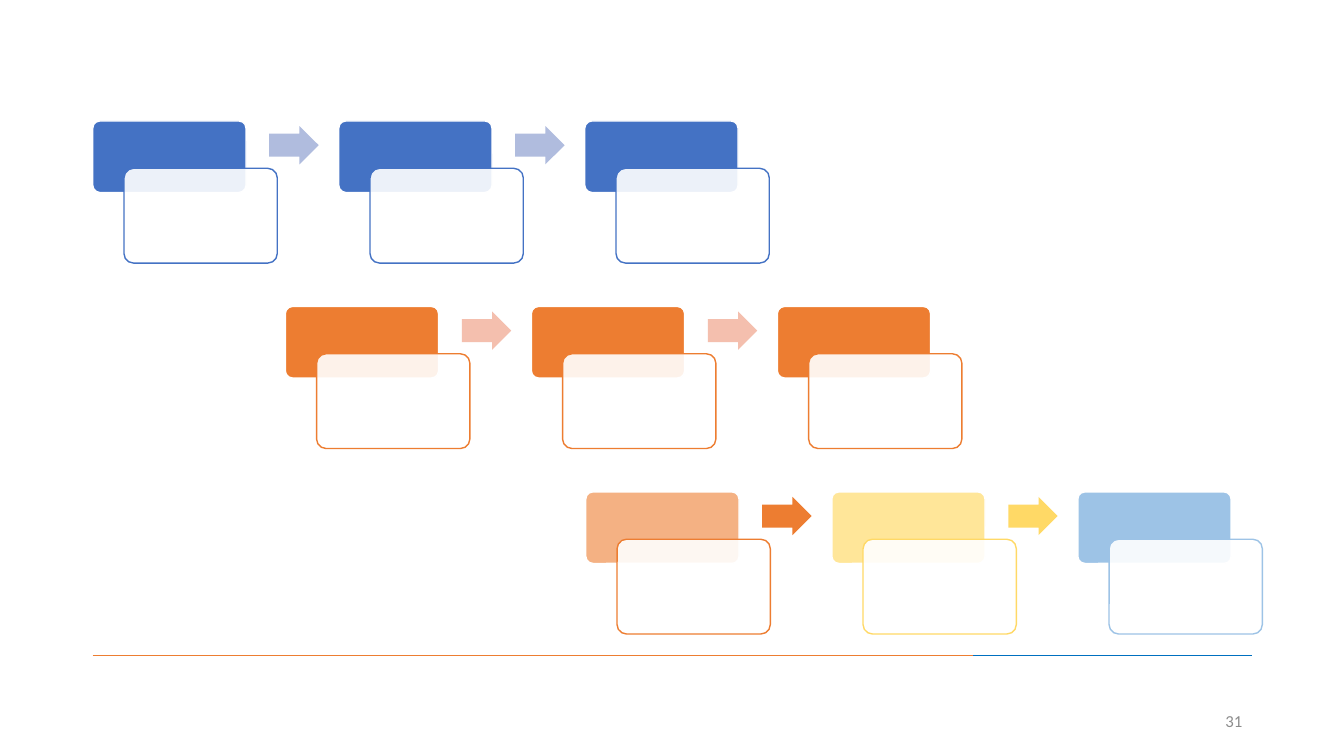
from dataclasses import dataclass

from lxml.etree import SubElement
from pptx import Presentation
from pptx.dml.color import RGBColor
from pptx.enum.shapes import MSO_CONNECTOR as Connector, MSO_SHAPE as Shape
from pptx.enum.text import MSO_ANCHOR as Anchor, PP_ALIGN as Align
from pptx.oxml.ns import qn
from pptx.util import Inches, Pt


@dataclass(frozen=True)
class Theme:
    white: str = "FFFFFF"
    blue: str = "4472C4"
    pale_blue: str = "B0BCDE"
    light_blue: str = "9DC3E6"
    rule_blue: str = "0070C0"
    orange: str = "ED7D31"
    pale_orange: str = "F4BFAE"
    light_orange: str = "F4B183"
    yellow: str = "FFD966"
    light_yellow: str = "FFE699"
    grey: str = "8C8C8C"
    font: str = "Calibri"
    number_size: int = 12
    line_width: int = 1
    card_opacity: int = 90


@dataclass(frozen=True)
class Step:
    header: str
    card_line: str
    arrow: str


@dataclass(frozen=True)
class Process:
    left: float
    steps: tuple[Step, ...]


@dataclass(frozen=True)
class Rule:
    start: float
    end: float
    color: str


@dataclass(frozen=True)
class Part:
    """A piece of a step, placed relative to the step's top left corner."""
    kind: Shape
    dx: float
    dy: float
    width: float
    height: float
    adjustments: tuple[float, ...]


THEME = Theme()
HEADER = Part(Shape.ROUNDED_RECTANGLE, 0, 0, 1.52, 0.71, (0.1,))
CARD = Part(Shape.ROUNDED_RECTANGLE, 0.31, 0.47, 1.52, 0.94, (0.1,))
ARROW = Part(Shape.RIGHT_ARROW, 1.75, 0.05, 0.49, 0.38, (0.6, 0.5))

FIRST_TOP, ROW_PITCH, STEP_PITCH = 1.2, 1.84, 2.44
RULE_TOP = 6.5

PROCESSES = (
    Process(0.92, (Step(THEME.blue, THEME.blue, THEME.pale_blue),) * 3),
    Process(2.83, (Step(THEME.orange, THEME.orange, THEME.pale_orange),) * 3),
    Process(5.81, (
        Step(THEME.light_orange, THEME.orange, THEME.orange),
        Step(THEME.light_yellow, THEME.yellow, THEME.yellow),
        Step(THEME.light_blue, THEME.light_blue, THEME.light_blue),
    )),
)
RULES = (Rule(0.92, 9.66, THEME.orange), Rule(9.65, 12.42, THEME.rule_blue))


def rgb(color: str) -> RGBColor:
    return RGBColor.from_string(color)


def style_line(line, color: str) -> None:
    line.color.rgb = rgb(color)
    line.width = Pt(THEME.line_width)


def add_part(shapes, part: Part, left: float, top: float, fill: str,
             outline: str | None = None, opacity: int = 100) -> None:
    shape = shapes.add_shape(part.kind, Inches(left + part.dx), Inches(top + part.dy),
                             Inches(part.width), Inches(part.height))
    shape.shadow.inherit = False
    for index, value in enumerate(part.adjustments):
        shape.adjustments[index] = value
    shape.fill.solid()
    shape.fill.fore_color.rgb = rgb(fill)
    if opacity < 100:
        color = shape.fill._xPr.find(f"{qn('a:solidFill')}/{qn('a:srgbClr')}")
        SubElement(color, qn("a:alpha")).set("val", str(opacity * 1000))
    if outline:
        style_line(shape.line, outline)
    else:
        shape.line.fill.background()


def add_process(slide, process: Process, top: float) -> None:
    shapes = slide.shapes.add_group_shape().shapes
    last = len(process.steps) - 1
    for index, step in enumerate(process.steps):
        left = process.left + index * STEP_PITCH
        add_part(shapes, HEADER, left, top, step.header, THEME.white)
        add_part(shapes, CARD, left, top, THEME.white, step.card_line, THEME.card_opacity)
        if index < last:
            add_part(shapes, ARROW, left, top, step.arrow)


def add_rule(shapes, rule: Rule) -> None:
    connector = shapes.add_connector(Connector.STRAIGHT, Inches(rule.start), Inches(RULE_TOP),
                                     Inches(rule.end), Inches(RULE_TOP))
    style_line(connector.line, rule.color)
    SubElement(connector._element.spPr, qn("a:effectLst"))


def add_slide_number(slide, number: str) -> None:
    frame = slide.shapes.add_textbox(Inches(12), Inches(6.95), Inches(0.42), Inches(0.4)).text_frame
    frame.word_wrap = True
    frame.vertical_anchor = Anchor.MIDDLE
    paragraph = frame.paragraphs[0]
    paragraph.text = number
    paragraph.alignment = Align.RIGHT
    for attribute, value in {"name": THEME.font, "size": Pt(THEME.number_size)}.items():
        setattr(paragraph.font, attribute, value)
    paragraph.font.color.rgb = rgb(THEME.grey)


def main() -> None:
    deck = Presentation()
    deck.slide_width, deck.slide_height = Inches(13.33), Inches(7.5)
    blank_layout = deck.slide_layouts[6]
    slide = deck.slides.add_slide(blank_layout)
    footer_rules = slide.shapes.add_group_shape().shapes
    for rule in RULES:
        add_rule(footer_rules, rule)
    add_slide_number(slide, "31")
    for row, process in enumerate(PROCESSES):
        add_process(slide, process, FIRST_TOP + row * ROW_PITCH)
    deck.save("out.pptx")


if __name__ == "__main__":
    main()
